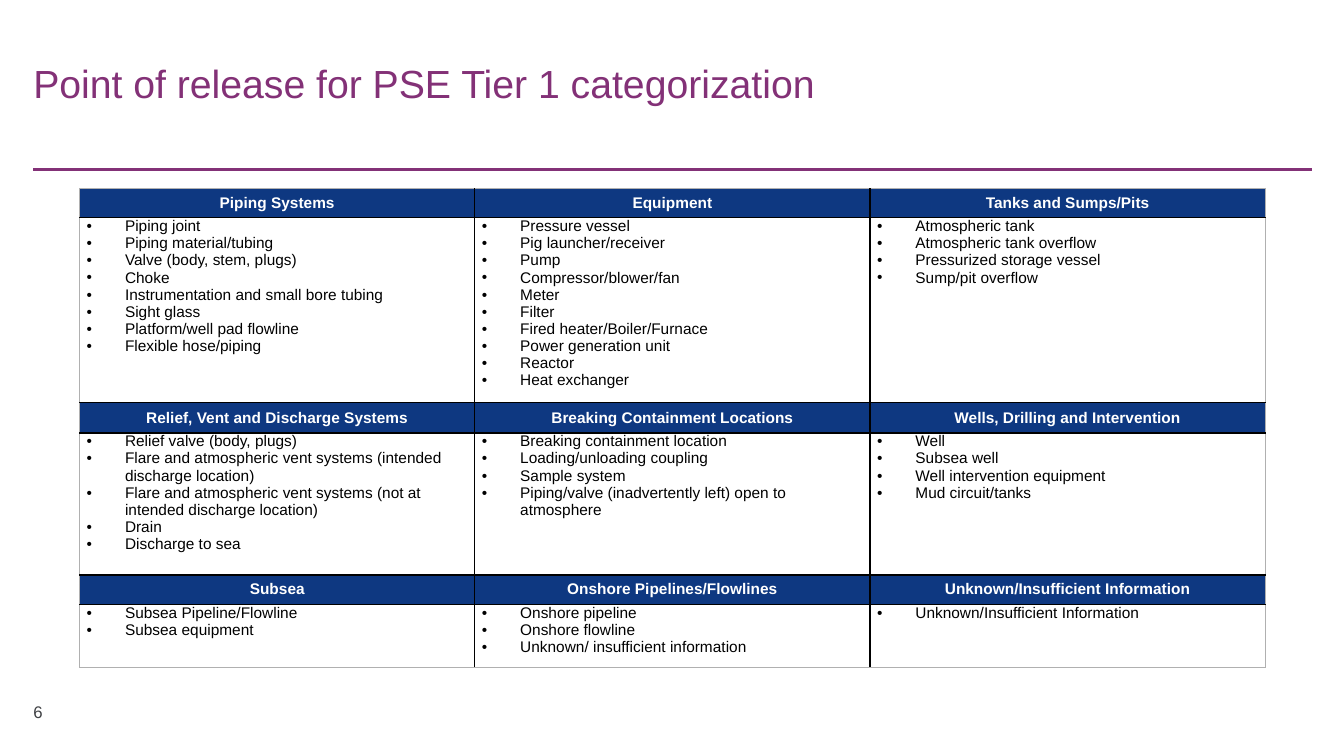
"""Build the slide that lists points of release for PSE Tier 1 categorization."""
from lxml import etree
from pptx import Presentation
from pptx.dml.color import RGBColor
from pptx.enum.shapes import MSO_CONNECTOR
from pptx.enum.text import MSO_ANCHOR, PP_ALIGN
from pptx.oxml.ns import qn
from pptx.util import Inches, Pt

PURPLE = RGBColor(0x83, 0x31, 0x77)
NAVY = RGBColor(0x0E, 0x38, 0x81)
WHITE = RGBColor(0xFF, 0xFF, 0xFF)
BLACK = RGBColor(0x00, 0x00, 0x00)
SLATE = RGBColor(0x3E, 0x40, 0x43)
GREY = RGBColor(0xB0, 0xB0, 0xB0)

LEFT, WIDTH = 0.33, 12.68
COL_W = 3.92
ROW_H = [0.29, 1.83, 0.3, 1.41, 0.29, 0.63]

BANDS = [
    [
        ("Piping Systems", [
            "Piping joint", "Piping material/tubing", "Valve (body, stem, plugs)", "Choke",
            "Instrumentation and small bore tubing", "Sight glass",
            "Platform/well pad flowline", "Flexible hose/piping"]),
        ("Equipment", [
            "Pressure vessel", "Pig launcher/receiver", "Pump", "Compressor/blower/fan", "Meter",
            "Filter", "Fired heater/Boiler/Furnace", "Power generation unit", "Reactor",
            "Heat exchanger"]),
        ("Tanks and Sumps/Pits", [
            "Atmospheric tank", "Atmospheric tank overflow", "Pressurized storage vessel",
            "Sump/pit overflow"]),
    ],
    [
        ("Relief, Vent and Discharge Systems", [
            "Relief valve (body, plugs)",
            "Flare and atmospheric vent systems (intended discharge location)",
            "Flare and atmospheric vent systems (not at intended discharge location)",
            "Drain", "Discharge to sea"]),
        ("Breaking Containment Locations", [
            "Breaking containment location", "Loading/unloading coupling", "Sample system",
            "Piping/valve (inadvertently left) open to atmosphere"]),
        ("Wells, Drilling and Intervention", [
            "Well", "Subsea well", "Well intervention equipment", "Mud circuit/tanks"]),
    ],
    [
        ("Subsea", ["Subsea Pipeline/Flowline", "Subsea equipment"]),
        ("Onshore Pipelines/Flowlines", [
            "Onshore pipeline", "Onshore flowline", "Unknown/ insufficient information"]),
        ("Unknown/Insufficient Information", ["Unknown/Insufficient Information"]),
    ],
]


def write(tf, lines, size=11, color=BLACK, bold=False, align=PP_ALIGN.LEFT, bullet=False,
          spacing=None):
    """Fill a text frame with one paragraph per line."""
    tf.word_wrap = True
    for i, line in enumerate(lines):
        p = tf.add_paragraph() if i else tf.paragraphs[0]
        p.alignment = align
        if spacing:
            p.line_spacing = spacing
        if bullet:
            pPr = p._p.get_or_add_pPr()
            pPr.set("marL", str(Inches(0.38)))
            pPr.set("indent", str(-Inches(0.38)))
            etree.SubElement(pPr, qn("a:buFont")).set("typeface", "Arial")
            etree.SubElement(pPr, qn("a:buChar")).set("char", "•")
        r = p.add_run()
        r.text = line
        r.font.name, r.font.size, r.font.bold = "Arial", Pt(size), bold
        r.font.color.rgb = color


def add_border(cell, side, color, width):
    """Draw one side of a table cell."""
    ln = etree.SubElement(cell._tc.get_or_add_tcPr(), qn(f"a:{side}"), w=str(Pt(width)))
    fill = etree.SubElement(ln, qn("a:solidFill"))
    etree.SubElement(fill, qn("a:srgbClr")).set("val", str(color))


prs = Presentation()
prs.slide_width, prs.slide_height = Inches(13.33), Inches(7.5)
s = prs.slides.add_slide(prs.slide_layouts[6])

rule = s.shapes.add_connector(MSO_CONNECTOR.STRAIGHT, Inches(LEFT), Inches(1.68),
                              Inches(LEFT + WIDTH), Inches(1.68))
rule.line.color.rgb, rule.line.width = PURPLE, Pt(2)
etree.SubElement(rule._element.spPr, qn("a:effectLst"))

for text, top, width, height, size, color, spacing in [
    ("Point of release for PSE Tier 1 categorization", 0.59, WIDTH, 0.99, 28, PURPLE, 0.9),
    ("6", 6.91, 0.71, 0.3, 12, SLATE, None),
]:
    sp = s.shapes.add_textbox(Inches(LEFT), Inches(top), Inches(width), Inches(height))
    sp.text_frame.margin_left = 0
    write(sp.text_frame, [text], size=size, color=color, spacing=spacing)

cols = len(BANDS[0])
tbl = s.shapes.add_table(len(ROW_H), cols, Inches(0.79), Inches(1.87),
                         Inches(COL_W * cols), Inches(sum(ROW_H))).table
tbl.horz_banding = False
for column in tbl.columns:
    column.width = Inches(COL_W)
for row, height in zip(tbl.rows, ROW_H):
    row.height = Inches(height)

for b, band in enumerate(BANDS):
    for c, (heading, items) in enumerate(band):
        for row in (2 * b, 2 * b + 1):
            cell = tbl.cell(row, c)
            cell.margin_left = cell.margin_right = Inches(0.07)
            cell.margin_top = cell.margin_bottom = 0
            outer = {"lnL": c == 0, "lnR": c == cols - 1,
                     "lnT": row == 0, "lnB": row == len(ROW_H) - 1}
            for side, edge in outer.items():
                add_border(cell, side, GREY if edge else BLACK, 0.5 if edge else 1)
            if row % 2 == 0:
                cell.vertical_anchor = MSO_ANCHOR.MIDDLE
                cell.fill.solid()
                cell.fill.fore_color.rgb = NAVY
                write(cell.text_frame, [heading], color=WHITE, bold=True, align=PP_ALIGN.CENTER)
            else:
                cell.fill.background()
                write(cell.text_frame, items, bullet=True)

prs.save("out.pptx")
